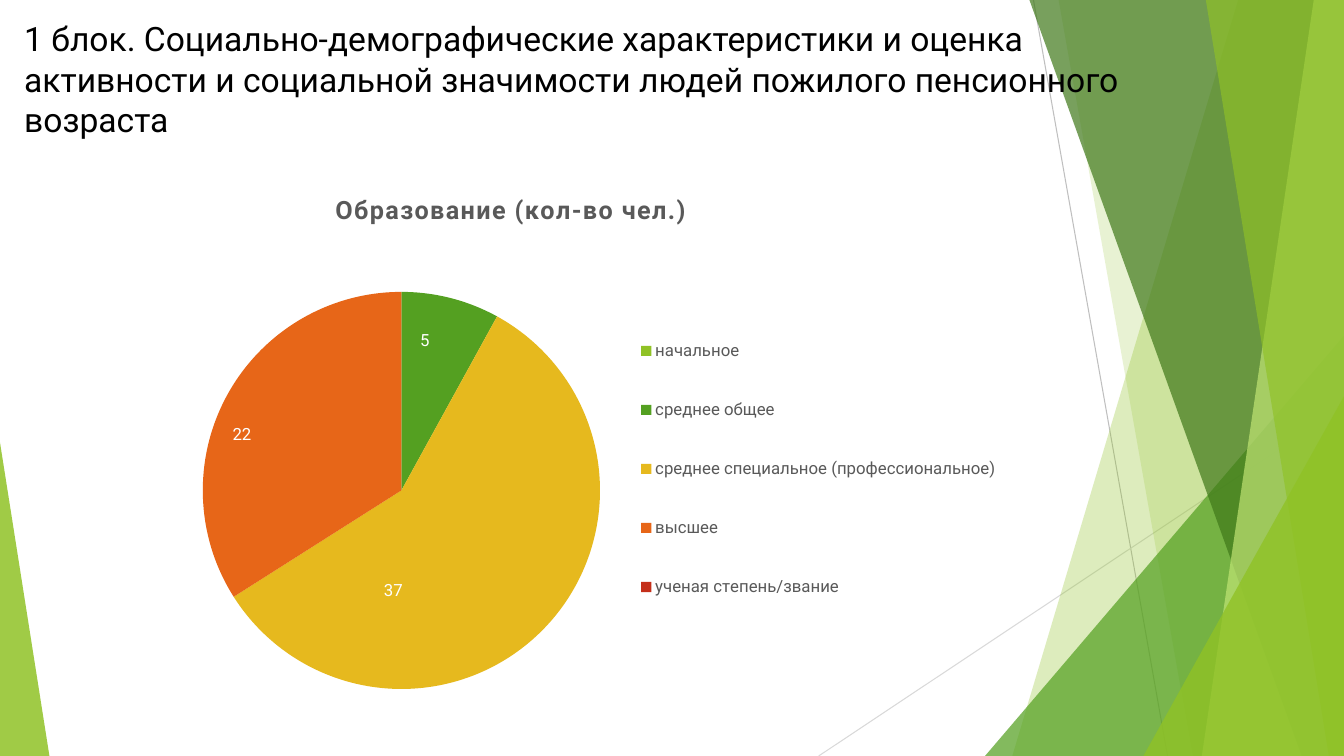
import pptx
import pptx.chart.data
import pptx.dml.color
import pptx.enum.chart
import pptx.enum.shapes
import pptx.enum.text
import pptx.oxml.ns
import pptx.oxml.xmlchemy
import pptx.util
from pptx.util import Inches

FONT = "Roboto"
SLIDE_BOX = (0, 0, 13.33, 7.5)
TITLE_BOX = (0.14, 0.13, 11.21, 1.4)
EDUCATION_BOX = (0.14, 1.71, 9.85, 5.35)

TITLE = ("1 блок. Социально-демографические характеристики и оценка активности "
         "и социальной значимости людей пожилого пенсионного возраста")

# category, share in percent, slice colour, people, label shift as share of the chart
EDUCATION = [
    ("начальное", 0, "90C226", None, None),
    ("среднее общее", 8, "54A021", "5", (-0.02, 0.05)),
    ("среднее специальное (профессиональное)", 58, "E6B91E", "37", (-0.14, -0.04)),
    ("высшее", 34, "E76618", "22", (0, 0.05)),
    ("ученая степень/звание", 0, "C42F1A", None, None),
]


def rgb(value):
    return pptx.dml.color.RGBColor.from_string(value)


def new_element(tag):
    return pptx.oxml.xmlchemy.OxmlElement(tag)


def format_font(font, size, colour, bold=False):
    values = {"name": FONT, "size": pptx.util.Pt(size), "bold": bold}
    for key, value in values.items():
        setattr(font, key, value)
    font.color.rgb = rgb(colour)


def paint(shape, colour, opacity):
    """Fill a shape with a colour at an opacity in percent, without line or shadow."""
    shape.shadow.inherit = False
    shape.line.fill.background()
    shape.fill.solid()
    shape.fill.fore_color.rgb = rgb(colour)
    fill_colour = shape._element.spPr.find(".//" + pptx.oxml.ns.qn("a:srgbClr"))
    alpha = new_element("a:alpha")
    alpha.set("val", str(opacity * 1000))
    fill_colour.append(alpha)


def add_ray(slide, start, end, colour):
    ray = slide.shapes.add_connector(
        pptx.enum.shapes.MSO_CONNECTOR.STRAIGHT, *map(Inches, start + end))
    ray.line.color.rgb = rgb(colour)
    ray.line.width = pptx.util.Pt(0.75)
    ray._element.spPr.append(new_element("a:effectLst"))


def add_shard(slide, box, top_x, bottom_x, colour, opacity):
    """Draw a full-height facet from a slanted left side to the right edge of the box."""
    left, top, width, height = box
    right, bottom = left + width, top + height
    builder = slide.shapes.build_freeform(
        Inches(left + top_x), Inches(top), scale=1.0)
    corners = [(right, top), (right, bottom), (left + bottom_x, bottom)]
    builder.add_line_segments([(Inches(x), Inches(y)) for x, y in corners])
    paint(builder.convert_to_shape(), colour, opacity)


def add_wedge(slide, box, left, width, height, apex, colour, opacity):
    """Draw a triangle standing on the bottom of the box."""
    top = box[1] + box[3] - height
    wedge = slide.shapes.add_shape(
        pptx.enum.shapes.MSO_SHAPE.ISOSCELES_TRIANGLE,
        *map(Inches, (box[0] + left, top, width, height)))
    wedge.adjustments[0] = apex
    paint(wedge, colour, opacity)


def add_facets(slide, box):
    left, top, width, height = box
    right, bottom = left + width, top + height
    add_ray(slide, (left + 10.25, top), (left + 11.58, bottom), "BFBFBF")
    add_ray(slide, (right, top + 4.03), (left + 8.12, bottom), "D9D9D9")
    add_shard(slide, box, 12.28, 10.04, "90C226", 30)
    add_shard(slide, box, 10.5, 11.83, "90C226", 20)
    add_wedge(slide, box, 9.77, 3.56, 4.17, 1, "54A021", 72)
    add_shard(slide, box, 10.21, 12.91, "3F7819", 70)
    add_shard(slide, box, 13.03, 11.92, "C0E474", 70)
    add_shard(slide, box, 11.96, 13.18, "90C226", 65)
    add_wedge(slide, box, 11.34, 1.99, 3.57, 1, "90C226", 80)
    add_wedge(slide, box, 0, 0.49, 3.11, 0, "90C226", 85)


def place_title(slide, box):
    title = slide.shapes.title
    for key, value in zip(("left", "top", "width", "height"), box):
        setattr(title, key, Inches(value))
    frame = title.text_frame
    frame.text = TITLE
    values = {"word_wrap": True,
              "auto_size": pptx.enum.text.MSO_AUTO_SIZE.NONE,
              "vertical_anchor": pptx.enum.text.MSO_ANCHOR.TOP}
    for key, value in values.items():
        setattr(frame, key, value)
    heading = frame.paragraphs[0]
    heading.alignment = pptx.enum.text.PP_ALIGN.LEFT
    format_font(heading.runs[0].font, 24, "000000")
    slide.shapes._spTree.append(title._element)  # in front of the facets


def manual_layout(**values):
    layout = new_element("c:layout")
    manual = new_element("c:manualLayout")
    layout.append(manual)
    for key, value in values.items():
        setting = new_element("c:" + key)
        setting.set("val", str(value))
        manual.append(setting)
    return layout


def replace_layout(parent, layout, before):
    """Put a layout into a chart part, ahead of the first child with the given tag."""
    for old in parent.findall(pptx.oxml.ns.qn("c:layout")):
        parent.remove(old)
    parent.find(pptx.oxml.ns.qn(before)).addprevious(layout)


def label_slices(series):
    series.data_labels.show_value = False
    for index, (_, _, colour, people, shift) in enumerate(EDUCATION):
        point = series.points[index]
        point.format.fill.solid()
        point.format.fill.fore_color.rgb = rgb(colour)
        if people is None:
            continue
        label = point.data_label
        label.text_frame.text = people
        format_font(label.text_frame.paragraphs[0].runs[0].font, 12, "FFFFFF")
        label.position = pptx.enum.chart.XL_LABEL_POSITION.INSIDE_END
        replace_layout(label._dLbl, manual_layout(x=shift[0], y=shift[1]), "c:tx")


def add_education_chart(slide, box):
    shares = pptx.chart.data.CategoryChartData()
    shares.categories = [row[0] for row in EDUCATION]
    shares.add_series("Образование (кол-во чел.)", [row[1] for row in EDUCATION])
    chart = slide.shapes.add_chart(
        pptx.enum.chart.XL_CHART_TYPE.PIE, *map(Inches, box), shares).chart
    format_font(chart.font, 10, "000000")

    chart.has_title = True
    chart.chart_title.text_frame.text = "Образование (кол-во чел.)"
    caption = chart.chart_title.text_frame.paragraphs[0].runs[0]
    format_font(caption.font, 18, "595959", bold=True)
    caption._r.get_or_add_rPr().set("spc", "100")

    chart.has_legend = True
    legend = chart.legend
    legend.position = pptx.enum.chart.XL_LEGEND_POSITION.RIGHT
    legend.include_in_layout = False
    format_font(legend.font, 12, "595959")
    replace_layout(legend._element, manual_layout(
        xMode="edge", yMode="edge", x=0.62, y=0.24, w=0.38, h=0.62), "c:overlay")

    pie = chart.plots[0]
    pie.vary_by_categories = True
    label_slices(pie.series[0])
    replace_layout(pie._element.getparent(), manual_layout(
        layoutTarget="inner", xMode="edge", yMode="edge",
        x=0.19, y=0.22, w=0.4, h=0.74), "c:pieChart")


def main():
    deck = pptx.Presentation()
    deck.slide_width, deck.slide_height = map(Inches, SLIDE_BOX[2:])
    slide = deck.slides.add_slide(deck.slide_layouts[5])
    add_facets(slide, SLIDE_BOX)
    place_title(slide, TITLE_BOX)
    add_education_chart(slide, EDUCATION_BOX)
    deck.save("out.pptx")


if __name__ == "__main__":
    main()
